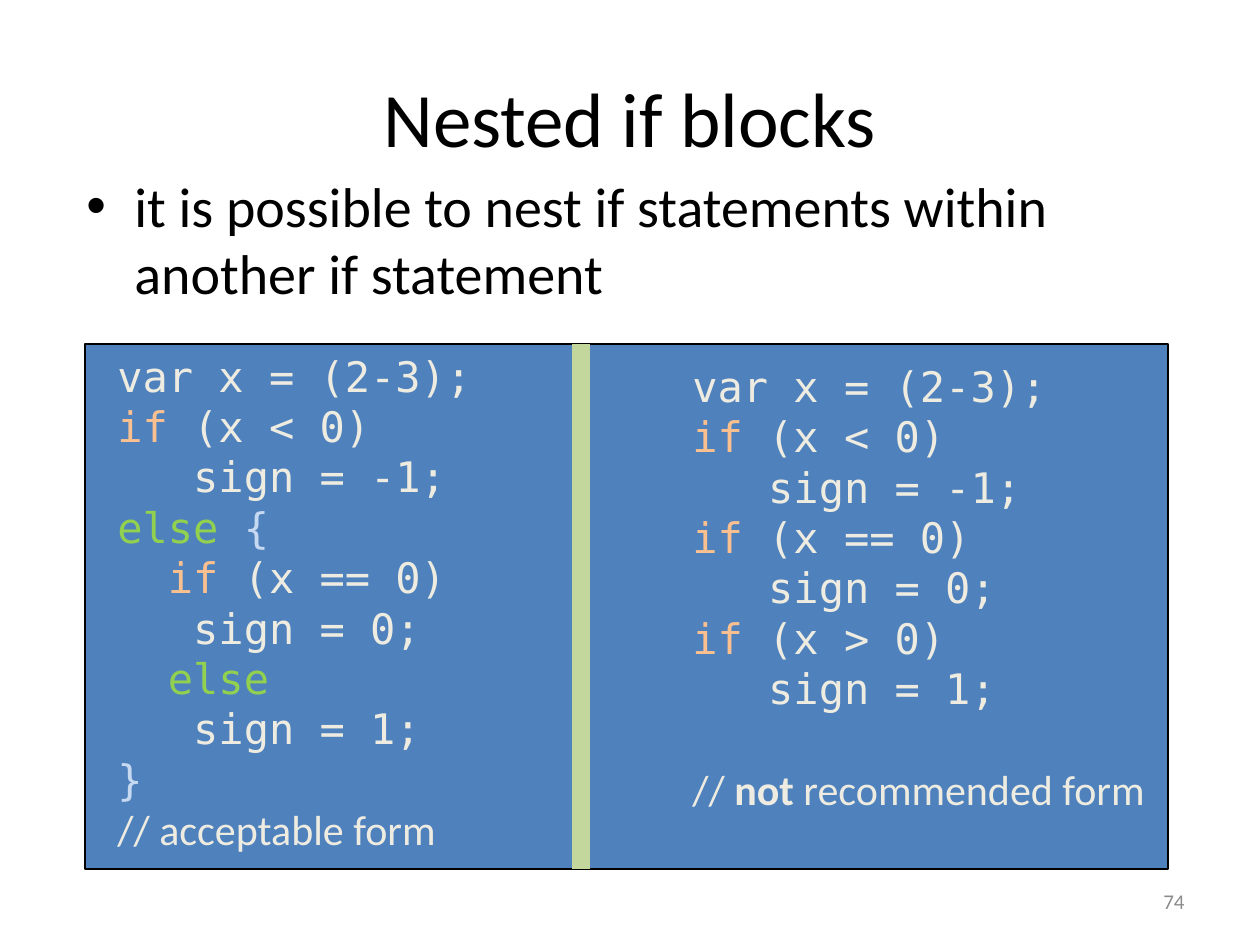
from lxml.etree import SubElement
from pptx import Presentation
from pptx.dml.color import RGBColor
from pptx.enum.shapes import MSO_CONNECTOR, MSO_SHAPE
from pptx.enum.text import MSO_ANCHOR, MSO_AUTO_SIZE, PP_ALIGN
from pptx.oxml.ns import qn
from pptx.util import Pt

PX = 914400 // 126
BLACK, GRAY, BLUE, GREEN_BAR = "000000", "8C8C8C", "4F81BD", "C3D69B"
CREAM, ORANGE, GREEN, PALE = "EEECE1", "FAC090", "92D050", "C6D9F1"
SANS, MONO = "Calibri", "DejaVu Sans Mono"


def px(*lengths):
    return [n * PX for n in lengths]


def rgb(color):
    return RGBColor.from_string(color)


class Deck:
    def __init__(self):
        self.prs = Presentation()
        self.prs.slide_width, self.prs.slide_height = px(1260, 945)
        self.s = self.prs.slides.add_slide(self.prs.slide_layouts[6])

    def run(self, p, text, size, color, font=SANS, bold=False):
        r = p.add_run()
        r.text = text
        r.font.size, r.font.name, r.font.bold = Pt(size), font, bold
        r.font.color.rgb = rgb(color)

    def box(self, at, anchor=MSO_ANCHOR.TOP):
        tf = self.s.shapes.add_textbox(*px(*at)).text_frame
        tf.word_wrap = True
        tf.vertical_anchor = anchor
        return tf

    def label(self, at, text, size, color, align):
        p = self.box(at, MSO_ANCHOR.MIDDLE).paragraphs[0]
        p.alignment = align
        self.run(p, text, size, color)

    def bullet(self, at, text, size, indent):
        p = self.box(at).paragraphs[0]
        pPr = p._p.get_or_add_pPr()
        width = px(indent)[0]
        pPr.set("marL", str(width))
        pPr.set("indent", str(-width))
        SubElement(pPr, qn("a:buFont")).set("typeface", "Arial")
        SubElement(pPr, qn("a:buChar")).set("char", "•")
        self.run(p, text, size, BLACK)

    def panel(self, at, fill, line):
        sp = self.s.shapes.add_shape(MSO_SHAPE.RECTANGLE, *px(*at))
        sp.shadow.inherit = False
        sp.fill.solid()
        sp.fill.fore_color.rgb = rgb(fill)
        sp.line.color.rgb = rgb(line)
        sp.line.width = Pt(1)

    def code(self, at, lines, comment, gap=0):
        """Lines are lists of (text, color); comment is a list of (text, bold)."""
        tf = self.box(at)
        tf.auto_size = MSO_AUTO_SIZE.SHAPE_TO_FIT_TEXT
        for i, line in enumerate(lines):
            p = tf.add_paragraph() if i else tf.paragraphs[0]
            for text, color in line:
                self.run(p, text, 24, color, MONO)
        p = tf.add_paragraph()
        if gap:
            p.space_before = Pt(gap)
        for text, bold in comment:
            self.run(p, text, 24, CREAM, bold=bold)

    def bar(self, x1, y1, x2, y2, color, width):
        line = self.s.shapes.add_connector(MSO_CONNECTOR.STRAIGHT, *px(x1, y1, x2, y2))
        line.line.color.rgb = rgb(color)
        line.line.width = Pt(width)
        SubElement(line._element.spPr, qn("a:effectLst"))


def main():
    deck = Deck()
    deck.label((63, 38, 1134, 158), "Nested if blocks", 44, BLACK, PP_ALIGN.CENTER)
    deck.bullet((74, 165, 1134, 624),
                "it is possible to nest if statements within another if statement", 32, 48)
    deck.label((903, 876, 294, 50), "74", 12, GRAY, PP_ALIGN.RIGHT)
    deck.panel((85, 344, 1083, 525), BLUE, BLACK)

    if_word = ("if", ORANGE)
    opening = [
        [("var x = (2-3);", CREAM)],
        [if_word, (" (x < 0)", CREAM)],
        [("   sign = -1;", CREAM)],
    ]
    if_zero = [if_word, (" (x == 0)", CREAM)]
    set_zero = [("   sign = 0;", CREAM)]
    set_one = [("   sign = 1;", CREAM)]
    nested = opening + [
        [("else ", GREEN), ("{", PALE)],
        [("  ", PALE)] + if_zero,
        set_zero,
        [("  else", GREEN)],
        set_one,
        [("}", PALE)],
    ]
    separate = opening + [
        if_zero,
        set_zero,
        [if_word, (" (x > 0)", CREAM)],
        set_one,
    ]
    deck.code((105, 344, 456, 522), nested, [("// acceptable form", False)])
    deck.code((680, 354, 486, 522), separate,
              [("// ", False), ("not", True), (" recommended form", False)], gap=29)
    deck.bar(581, 344, 581, 869, GREEN_BAR, 10)
    deck.prs.save("out.pptx")


if __name__ == "__main__":
    main()
